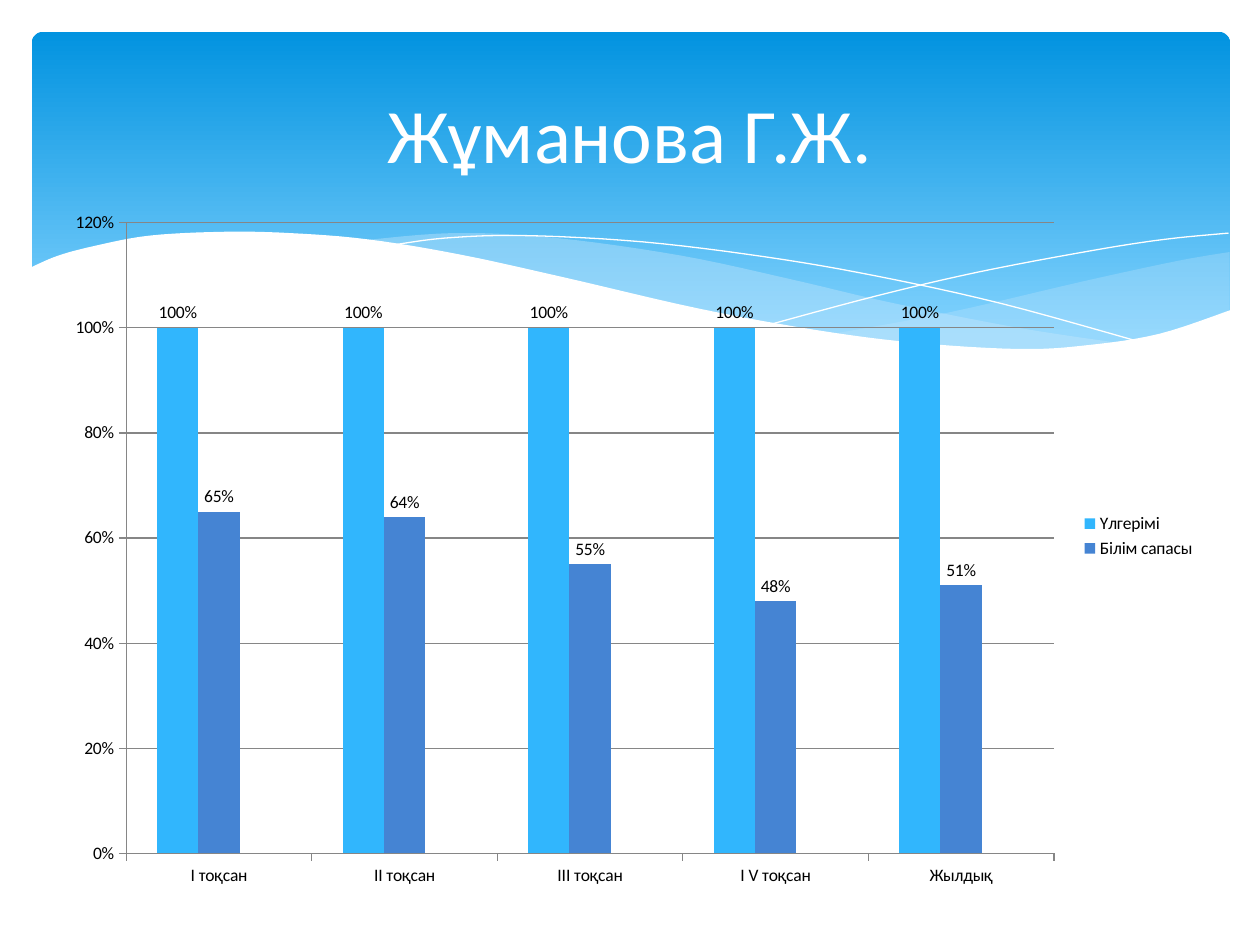
"""Build a title slide part with waves and a column chart of quarterly results."""
import lxml.etree
import pptx
import pptx.chart.data
import pptx.dml.color
import pptx.enum.chart
import pptx.enum.shapes
import pptx.enum.text
import pptx.oxml
import pptx.oxml.ns
import pptx.util

Cm = pptx.util.Cm
Pt = pptx.util.Pt
qn = pptx.oxml.ns.qn
FONT = "Calibri"
COLORS = {
    "top": "0293E0", "bottom": "83D3FE", "wave": "C6E7FC", "white": "FFFFFF",
    "text": "000000", "axis": "868686",
    "progress": "31B6FD", "quality": "4584D3", "spare": "5BD078",
}
CATEGORIES = ["І тоқсан", "ІІ тоқсан", "ІІІ тоқсан", "І V тоқсан", "Жылдық"]
SERIES = [
    ("Үлгерімі", [1, 1, 1, 1, 1], "progress"),
    ("Білім сапасы", [0.65, 0.64, 0.55, 0.48, 0.51], "quality"),
    ("Series 3", [None] * 5, "spare"),
]
PLOT_AREA = {"x": 0.054, "y": 0.066, "w": 0.811, "h": 0.874}

RIGHT_WAVE = [
    [(9.76, 2), (9.35, 2.07), (8.61, 2.23), (7.53, 2.48), (6.61, 2.65)],
    [(6.61, 2.65), (7.32, 2.74), (8.14, 2.78), (8.81, 2.73), (9.35, 2.62), (9.76, 2.47)],
]
MIDDLE_WAVE = [
    [(8.93, 2.73), (8.07, 2.6), (7.06, 2.4), (6.29, 2.22), (5.41, 2.03),
     (4.42, 1.89), (3.61, 1.85), (2.86, 1.91)],
    [(2.86, 1.91), (3.62, 2.03), (4.49, 2.22), (5.66, 2.48), (6.5, 2.64),
     (7.36, 2.75), (8.18, 2.78), (8.93, 2.73)],
]
FALLING_LINE = [[(3.09, 1.95), (3.53, 1.89), (4.16, 1.87), (5.1, 1.92), (6.08, 2.04),
                 (6.95, 2.19), (7.95, 2.41), (9.07, 2.72)]]
RISING_LINE = [[(6.13, 2.57), (6.95, 2.35), (7.76, 2.16), (8.66, 1.99),
                (9.24, 1.9), (9.75, 1.85)]]
WHITE_WAVE = [
    [(9.77, 2.46), (9.2, 2.65), (8.63, 2.74), (8.09, 2.77), (7.26, 2.72), (6.48, 2.62),
     (5.55, 2.45), (4.47, 2.2), (3.65, 2.02), (2.92, 1.9), (2.3, 1.85), (1.77, 1.84),
     (1.19, 1.87), (0.76, 1.95), (0.46, 2.03), (0.23, 2.13)],
    [(0.23, 3.29), (9.77, 3.29)],
]


def rgb(name):
    """Return the named colour."""
    return pptx.dml.color.RGBColor.from_string(COLORS[name])


def format_font(font, size, color):
    """Set face, size and colour of a font."""
    font.name, font.size, font.color.rgb = FONT, Pt(size), rgb(color)


def write_text(box, text, size, color, align):
    """Write one formatted paragraph into a box."""
    para = box.text_frame.paragraphs[0]
    para.alignment = align
    span = para.add_run()
    span.text = text
    format_font(span.font, size, color)


def smooth(knots, steps=6):
    """Return points of a Catmull-Rom curve through the knots."""
    if len(knots) < 3:
        return knots
    padded = [knots[0], *knots, knots[-1]]
    points = [knots[0]]
    for a, b, c, d in zip(padded, padded[1:], padded[2:], padded[3:]):
        for step in range(1, steps + 1):
            t = step / steps
            points.append(tuple(
                (2 * q + (r - p) * t + (2 * p - 5 * q + 4 * r - s) * t ** 2
                 + (3 * q - p - 3 * r + s) * t ** 3) / 2
                for p, q, r, s in zip(a, b, c, d)))
    return points


class SlideBuilder:
    """Hold the current slide and draw its elements."""

    def __init__(self, slide):
        self.slide = slide
        self.shapes = slide.shapes

    def panel(self, left, top, width, height):
        """Draw the rounded gradient panel."""
        shape = self.shapes.add_shape(
            pptx.enum.shapes.MSO_SHAPE.ROUNDED_RECTANGLE,
            Cm(left), Cm(top), Cm(width), Cm(height))
        shape.adjustments[0] = 0.034
        shape.shadow.inherit = False
        shape.line.fill.background()
        shape.fill.gradient()
        shape.fill.gradient_angle = 270
        stops = zip(shape.fill.gradient_stops, ("top", "bottom"), (0, 0.9))
        for stop, color, position in stops:
            stop.color.rgb, stop.position = rgb(color), position

    def curve(self, curves, fill=None, opacity=100):
        """Draw a filled wave, or a white hairline when there is no fill."""
        points = [(Cm(2.54 * x), Cm(2.54 * y)) for part in curves for x, y in smooth(part)]
        builder = self.shapes.build_freeform(*points[0])
        builder.add_line_segments(points[1:], close=fill is not None)
        shape = builder.convert_to_shape()
        shape.shadow.inherit = False
        if fill is None:
            shape.fill.background()
            shape.line.color.rgb, shape.line.width = rgb("white"), Pt(0)
            return
        shape.line.fill.background()
        shape.fill.solid()
        shape.fill.fore_color.rgb = rgb(fill)
        if opacity < 100:
            color = shape.element.spPr.find(qn("a:solidFill"))[0]
            lxml.etree.SubElement(color, qn("a:alpha")).set("val", str(opacity * 1000))

    def title(self, text, left, top, width, height):
        """Place the title above the background shapes."""
        box = self.shapes.title
        box.left, box.top, box.width, box.height = map(Cm, (left, top, width, height))
        box.text_frame.vertical_anchor = pptx.enum.text.MSO_ANCHOR.MIDDLE
        write_text(box, text, size=44, color="white", align=pptx.enum.text.PP_ALIGN.CENTER)
        box.element.getparent().append(box.element)

    def chart(self, left, top, width, height):
        """Draw the clustered column chart."""
        data = pptx.chart.data.CategoryChartData(number_format="0%")
        data.categories = CATEGORIES
        for name, values, _ in SERIES:
            data.add_series(name, values)
        chart = self.shapes.add_chart(
            pptx.enum.chart.XL_CHART_TYPE.COLUMN_CLUSTERED,
            Cm(left), Cm(top), Cm(width), Cm(height), data).chart
        format_font(chart.font, 10, "text")
        chart.has_title = False
        plot = chart.plots[0]
        plot.gap_width, plot.overlap, plot.vary_by_categories = 150, 0, False
        for series, (_, values, color) in zip(plot.series, SERIES):
            series.format.fill.solid()
            series.format.fill.fore_color.rgb = rgb(color)
            if values[0] is not None:
                labels = series.data_labels
                labels.show_value = True
                labels.number_format, labels.number_format_is_linked = "0%", False
                labels.position = pptx.enum.chart.XL_LABEL_POSITION.OUTSIDE_END
        self.axes(chart)
        self.legend(chart)
        area = chart.element.find(".//" + qn("c:plotArea"))
        for old in area.findall(qn("c:layout")):
            area.remove(old)
        layout = pptx.oxml.parse_xml(f"<c:layout {pptx.oxml.ns.nsdecls('c')}/>")
        area.insert(0, layout)
        manual = lxml.etree.SubElement(layout, qn("c:manualLayout"))
        settings = {"layoutTarget": "inner", "xMode": "edge", "yMode": "edge", **PLOT_AREA}
        for tag, value in settings.items():
            lxml.etree.SubElement(manual, qn("c:" + tag)).set("val", str(value))

    def axes(self, chart):
        """Format both axes and the gridlines."""
        value_axis = chart.value_axis
        value_axis.minimum_scale, value_axis.maximum_scale = 0, 1.2
        value_axis.major_unit = 0.2
        value_axis.has_major_gridlines = True
        value_axis.tick_labels.number_format = "0%"
        value_axis.tick_labels.number_format_is_linked = False
        for axis in (value_axis, chart.category_axis):
            axis.major_tick_mark = pptx.enum.chart.XL_TICK_MARK.OUTSIDE
        for part in (value_axis, chart.category_axis, value_axis.major_gridlines):
            part.format.line.color.rgb, part.format.line.width = rgb("axis"), Pt(0.75)

    def legend(self, chart):
        """Show the legend without the spare series."""
        chart.has_legend = True
        chart.legend.position = pptx.enum.chart.XL_LEGEND_POSITION.RIGHT
        chart.legend.include_in_layout = False
        entry = pptx.oxml.parse_xml(
            f"<c:legendEntry {pptx.oxml.ns.nsdecls('c')}>"
            '<c:idx val="2"/><c:delete val="1"/></c:legendEntry>')
        chart.element.find(".//" + qn("c:legendPos")).addnext(entry)


def main():
    """Build and save the deck."""
    deck = pptx.Presentation()
    deck.slide_width, deck.slide_height = Cm(25.4), Cm(19.05)
    page = SlideBuilder(deck.slides.add_slide(deck.slide_layouts[5]))
    page.panel(0.64, 0.64, 24.16, 6.86)
    page.curve(RIGHT_WAVE, fill="wave", opacity=29)
    page.curve(MIDDLE_WAVE, fill="wave", opacity=40)
    page.curve(FALLING_LINE)
    page.curve(RISING_LINE)
    page.curve(WHITE_WAVE, fill="white")
    page.title("Жұманова Г.Ж.", 1.27, 0.94, 22.86, 3.48)
    page.chart(1.3, 3.53, 23.06, 14.55)
    deck.save("out.pptx")


if __name__ == "__main__":
    main()
